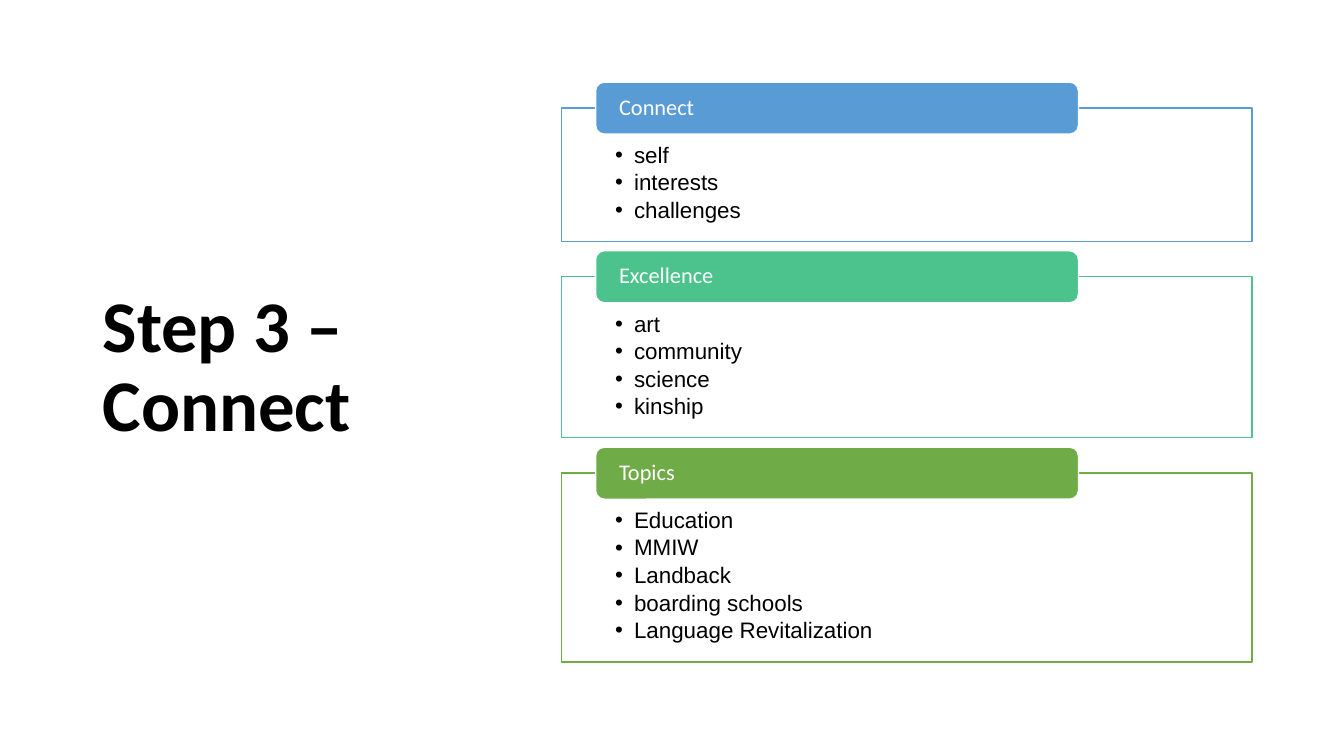
"""Build the "Step 3 – Connect" slide with three titled bullet boxes."""
import pptx
import pptx.util
import pptx.dml.color
import pptx.enum.shapes
import pptx.enum.text
import pptx.oxml.ns
import lxml.etree
from dataclasses import dataclass

TITLE = "Step 3 –\vConnect"
SECTIONS = [
    ("Connect", "599BD5", ["self", "interests", "challenges"]),
    ("Excellence", "4CC38C", ["art", "community", "science", "kinship"]),
    ("Topics", "6FAB46", ["Education", "MMIW", "Landback", "boarding schools",
                          "Language Revitalization"]),
]


@dataclass(frozen=True)
class Theme:
    dark: str = "000000"
    light: str = "FFFFFF"
    title_size: int = 52
    text_size: int = 16
    heading_font: str = "Calibri"
    body_font: str = "Arial"
    line_width: int = 1
    box_alpha: int = 89


THEME = Theme()
Cm, Pt = pptx.util.Cm, pptx.util.Pt
qn = pptx.oxml.ns.qn
SHAPE = pptx.enum.shapes.MSO_SHAPE
ANCHOR = pptx.enum.text.MSO_ANCHOR

BOX_LEFT, BOX_WIDTH, FIRST_TOP, BOX_GAP = 14.15, 17.4, 2.72, 0.89
BOX_PADDING, ROW_HEIGHT = 1.26, 0.7
TAB_LEFT, TAB_WIDTH, TAB_HEIGHT, TAB_RISE = 15.01, 12.17, 1.31, 0.65
BULLET_INDENT = 0.48


def rgb(color):
    return pptx.dml.color.RGBColor.from_string(color)


def add_panel(s, kind, left, top, width, height, fill, line):
    sp = s.shapes.add_shape(kind, Cm(left), Cm(top), Cm(width), Cm(height))
    sp.shadow.inherit = False
    sp.fill.solid()
    sp.fill.fore_color.rgb = rgb(fill)
    sp.line.color.rgb = rgb(line)
    sp.line.width = Pt(THEME.line_width)
    return sp


def write(sp, lines, font, size, color, margins, anchor, bold=False):
    tf = sp.text_frame
    tf.word_wrap = True
    tf.vertical_anchor = anchor
    tf.margin_left, tf.margin_top, tf.margin_right, tf.margin_bottom = map(Cm, margins)
    tf.text = "\n".join(lines)
    for p in tf.paragraphs:
        p.alignment = pptx.enum.text.PP_ALIGN.LEFT
        p.line_spacing = 0.9
        for r in p.runs:
            r.font.name = font
            r.font.size = Pt(size)
            r.font.bold = bold
            r.font.color.rgb = rgb(color)
    return tf


def add_bullet(p):
    p.level = 1
    pPr = p._p.get_or_add_pPr()
    pPr.set("marL", str(Cm(BULLET_INDENT)))
    pPr.set("indent", str(-Cm(BULLET_INDENT)))
    clr = lxml.etree.SubElement(pPr, qn("a:buClr"))
    lxml.etree.SubElement(clr, qn("a:srgbClr"), val=THEME.dark)
    lxml.etree.SubElement(pPr, qn("a:buFont"), typeface=THEME.body_font)
    lxml.etree.SubElement(pPr, qn("a:buChar"), char="•")


def add_section(s, top, height, heading, color, items):
    box = add_panel(s, SHAPE.RECTANGLE, BOX_LEFT, top, BOX_WIDTH, height,
                    THEME.light, color)
    fill = box._element.spPr.find(qn("a:solidFill"))
    lxml.etree.SubElement(fill[0], qn("a:alpha"), val=str(THEME.box_alpha * 1000))
    tf = write(box, items, THEME.body_font, THEME.text_size, THEME.dark,
               (1.35, 0.91, 1.35, 0.3), ANCHOR.TOP)
    for i, p in enumerate(tf.paragraphs):
        if i:
            p.space_before = Pt(2.4)
        add_bullet(p)
    tab = add_panel(s, SHAPE.ROUNDED_RECTANGLE, TAB_LEFT, top - TAB_RISE,
                    TAB_WIDTH, TAB_HEIGHT, color, THEME.light)
    write(tab, [heading], THEME.heading_font, THEME.text_size, THEME.light,
          (0.53, 0, 0.53, 0), ANCHOR.MIDDLE)


def main():
    prs = pptx.Presentation()
    prs.slide_width, prs.slide_height = Cm(33.87), Cm(19.05)
    s = prs.slides.add_slide(prs.slide_layouts[6])
    title = s.shapes.add_textbox(Cm(2.34), Cm(1.55), Cm(9.37), Cm(15.47))
    write(title, [TITLE], THEME.heading_font, THEME.title_size, THEME.dark,
          (0.25, 0.13, 0.25, 0.13), ANCHOR.MIDDLE, bold=True)
    top = FIRST_TOP
    for heading, color, items in SECTIONS:
        height = BOX_PADDING + ROW_HEIGHT * len(items)
        add_section(s, top, height, heading, color, items)
        top += height + BOX_GAP
    prs.save("out.pptx")


if __name__ == "__main__":
    main()
